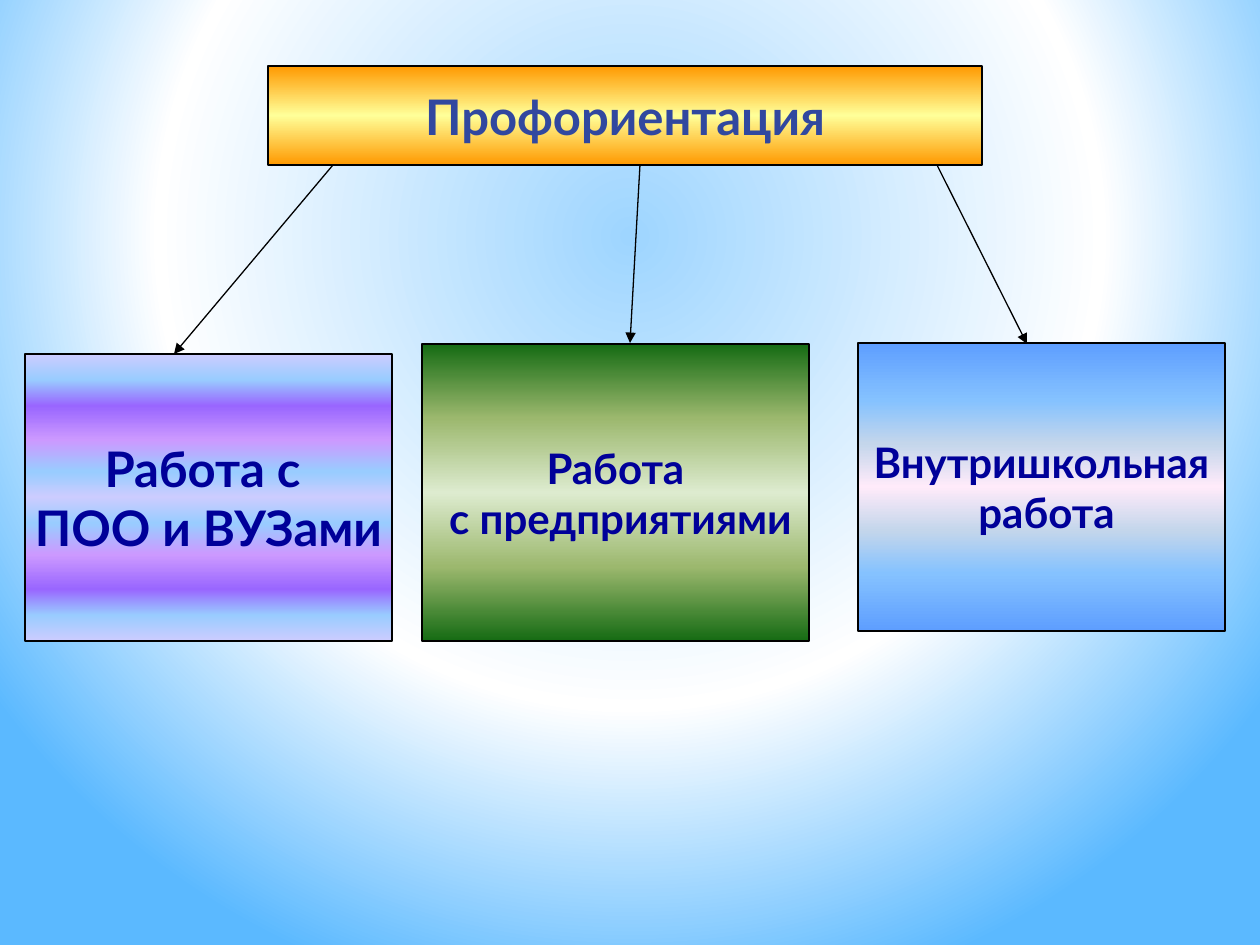
from lxml import etree
from pptx import Presentation
from pptx import util as u
from pptx.dml.color import RGBColor
from pptx.enum import shapes, text
from pptx.oxml import parse_xml
from pptx.oxml.ns import nsdecls, qn

SCALE = 914400 / 126
FONT = "Lato"
HUES = {"line": "000000", "head": "31489F", "body": "000099"}
FILLS = {
    "back": [(0, "9ED5FF"), (60, "FFFFFF"), (100, "5BB9FF")],
    "gold": [(0, "FF9900"), (50, "FFFF99")],
    "lilac": [(0, "CCCCFF"), (9, "99CCFF"), (18, "9966FF"),
              (30, "CC99FF"), (41, "99CCFF"), (50, "CCCCFF")],
    "green": [(0, "156B13"), (25, "9CB86E"), (50, "DDEBCF")],
    "blue": [(0, "5E9EFF"), (20, "85C2FF"), (35, "C4D6EB"), (50, "FFEBFA")],
}
DOWN = '<a:lin ang="5400000" scaled="1"/>'
ROUND = ('<a:path path="circle">'
         '<a:fillToRect l="20000" t="10000" r="20000" b="60000"/></a:path>')


def px(num):
    return u.Emu(round(num * SCALE))


def mirror(stops):
    return stops + [(100 - at, hue) for at, hue in stops[-2::-1]]


def blend(fill, root, stops, shade):
    fill.gradient()
    old = root.find(".//" + qn("a:gradFill"))
    marks = "".join(f'<a:gs pos="{at * 1000}"><a:srgbClr val="{hue}"/></a:gs>'
                    for at, hue in stops)
    new = parse_xml(f'<a:gradFill {nsdecls("a")} rotWithShape="1">'
                    f'<a:gsLst>{marks}</a:gsLst>{shade}</a:gradFill>')
    old.getparent().replace(old, new)


def stroke(line):
    line.color.rgb = RGBColor.from_string(HUES["line"])
    line.width = u.Pt(0.75)


def panel(slide, box, fill, lines, size, hue):
    shape = slide.shapes.add_shape(shapes.MSO_SHAPE.RECTANGLE, *map(px, box))
    shape.shadow.inherit = False
    blend(shape.fill, shape.element, mirror(FILLS[fill]), DOWN)
    stroke(shape.line)
    frame = shape.text_frame
    frame.word_wrap = False
    frame.vertical_anchor = text.MSO_ANCHOR.MIDDLE
    for num, words in enumerate(lines):
        para = frame.add_paragraph() if num else frame.paragraphs[0]
        para.alignment = text.PP_ALIGN.CENTER
        run = para.add_run()
        run.text = words
        font = run.font
        font.name, font.size, font.bold = FONT, u.Pt(size), True
        font.color.rgb = RGBColor.from_string(HUES[hue])


def arrow(slide, start, end):
    line = slide.shapes.add_connector(
        shapes.MSO_CONNECTOR.STRAIGHT, *map(px, start + end))
    stroke(line.line)
    props = line.element.spPr
    etree.SubElement(line.line._get_or_add_ln(), qn("a:tailEnd"), type="triangle")
    etree.SubElement(props, qn("a:effectLst"))


def chart(slide, box):
    left, top, wide, high = box
    panel(slide, (left + 268, top + 66, 714, 99), "gold",
          ["Профориентация"], 28, "head")
    cards = [
        ((25, 354, 367, 287), "lilac", ["Работа с ", "ПОО и ВУЗами"], 28),
        ((422, 344, 387, 297), "green", ["Работа", " с предприятиями"], 24),
        ((858, 343, 367, 288), "blue", ["Внутришкольная", " работа"], 24),
    ]
    for (x, y, w, h), fill, lines, size in cards:
        panel(slide, (left + x, top + y, w, h), fill, lines, size, "body")
    for x, x2, y2 in [(333, 174, 354), (640, 630, 343), (937, 1027, 344)]:
        arrow(slide, (left + x, top + 165), (left + x2, top + y2))


def main():
    deck = Presentation()
    deck.slide_width, deck.slide_height = px(1260), px(945)
    slide = deck.slides.add_slide(deck.slide_layouts[6])
    blend(slide.background.fill, slide.element, FILLS["back"], ROUND)
    chart(slide, (0, 0, 1260, 945))
    deck.save("out.pptx")


if __name__ == "__main__":
    main()
